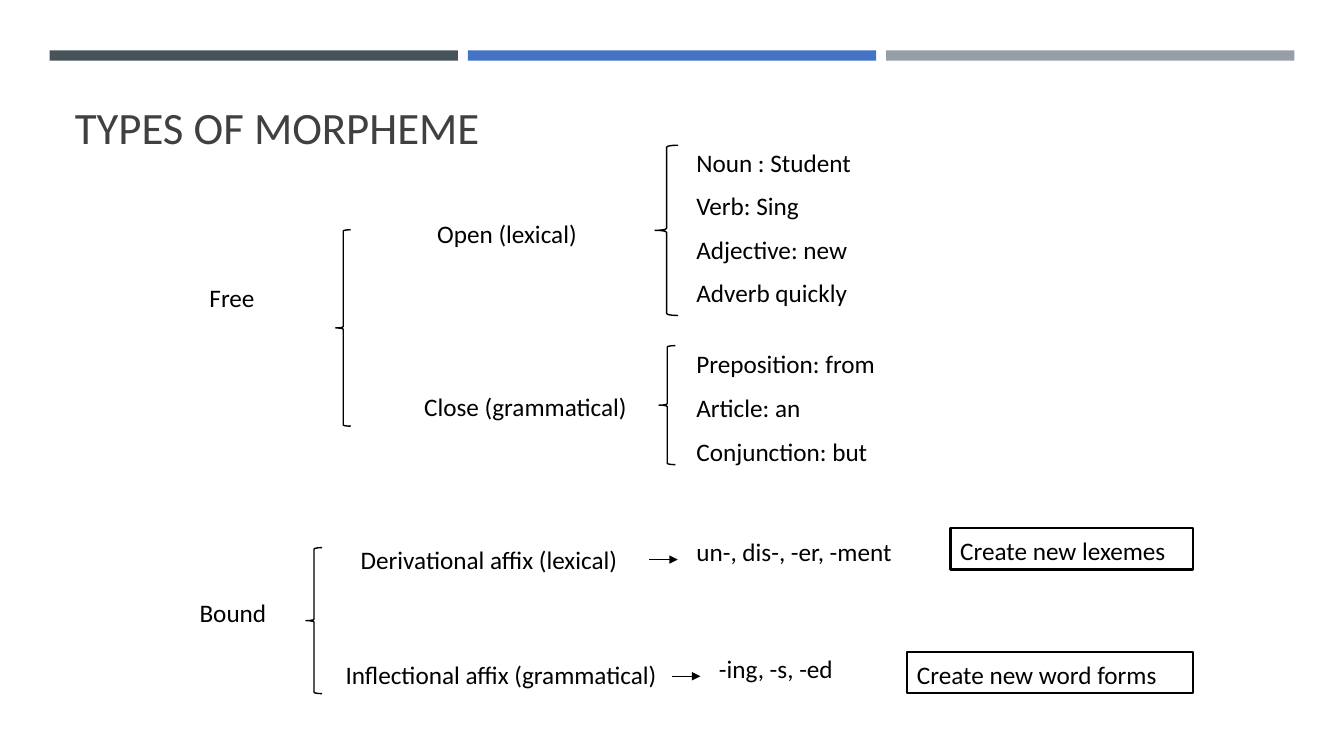
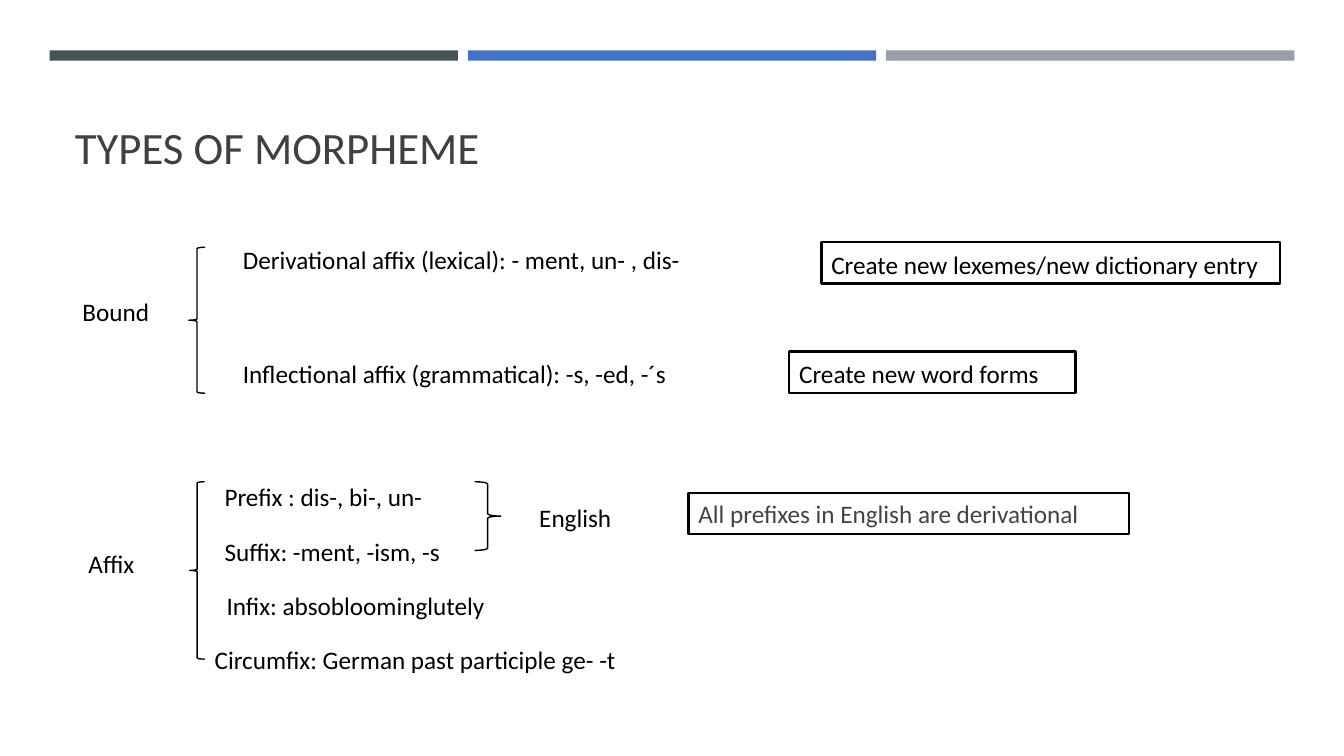
"""Build two slides on the types of morpheme."""
import pptx
import pptx.util
import pptx.dml.color
import pptx.enum.shapes
import pptx.enum.text
import pptx.oxml
import pptx.oxml.ns

Cm, Pt = pptx.util.Cm, pptx.util.Pt
RGBColor = pptx.dml.color.RGBColor
SHAPE = pptx.enum.shapes.MSO_SHAPE
NSDECL = pptx.oxml.ns.nsdecls("a")

SLATE = RGBColor(0x46, 0x53, 0x59)
BLUE = RGBColor(0x44, 0x72, 0xC4)
GREY = RGBColor(0x96, 0x9F, 0xA7)
TITLE_GREY = RGBColor(0x40, 0x40, 0x40)
NOTE_GREY = RGBColor(0x44, 0x44, 0x44)
BLACK = RGBColor(0, 0, 0)
WHITE = RGBColor(0xFF, 0xFF, 0xFF)
FONT = "Calibri"
ROW_H = 1.04
LIST_STEP = 1.11


def style(p, color=BLACK, size=18):
    """Set the font and left alignment of a paragraph."""
    p.font.name, p.font.size, p.font.color.rgb = FONT, Pt(size), color
    p.alignment = pptx.enum.text.PP_ALIGN.LEFT


def fill_text(tf, lines, color=BLACK, line_spacing=1.07):
    """Write lines as spaced paragraphs into a text frame."""
    tf.word_wrap = True
    tf.vertical_anchor = pptx.enum.text.MSO_ANCHOR.TOP
    for i, line in enumerate(lines):
        p = tf.add_paragraph() if i else tf.paragraphs[0]
        p.text = line
        p.line_spacing, p.space_after = line_spacing, Pt(8)
        style(p, color)


def label(s, x, y, w, *lines):
    """Add a plain text box sized for its lines."""
    h = ROW_H + LIST_STEP * (len(lines) - 1)
    tb = s.shapes.add_textbox(Cm(x), Cm(y), Cm(w), Cm(h))
    fill_text(tb.text_frame, lines)


def shape(s, kind, x, y, w, h, fill=None, line=None, weight=1):
    """Add a preset shape without shadow."""
    sp = s.shapes.add_shape(kind, Cm(x), Cm(y), Cm(w), Cm(h))
    sp.shadow.inherit = False
    if fill is None:
        sp.fill.background()
    else:
        sp.fill.solid()
        sp.fill.fore_color.rgb = fill
    if line is None:
        sp.line.fill.background()
    else:
        sp.line.color.rgb, sp.line.width = line, Pt(weight)
    return sp


def brace(s, x, y, w, h, kind=SHAPE.LEFT_BRACE):
    """Add a thin black brace."""
    shape(s, kind, x, y, w, h, line=BLACK)


def framed(s, x, y, w, text, color=BLACK, line_spacing=1.07):
    """Add a framed white box with one line of text."""
    sp = shape(s, SHAPE.RECTANGLE, x, y, w, ROW_H, WHITE, BLACK, 1.75)
    fill_text(sp.text_frame, [text], color, line_spacing)


def arrow(s, x, y, length=0.72):
    """Add a short arrow pointing right."""
    c = s.shapes.add_connector(pptx.enum.shapes.MSO_CONNECTOR.STRAIGHT,
                               Cm(x), Cm(y), Cm(x + length), Cm(y))
    c.line.color.rgb, c.line.width = BLACK, Pt(1)
    c.line._get_or_add_ln().append(
        pptx.oxml.parse_xml(f'<a:tailEnd {NSDECL} type="triangle"/>'))
    c._element.spPr.append(pptx.oxml.parse_xml(f"<a:effectLst {NSDECL}/>"))


def new_slide(prs, title_top):
    """Add a slide with the three top bands and the title."""
    s = prs.slides.add_slide(prs.slide_layouts[5])
    for i, color in enumerate((SLATE, BLUE, GREY)):
        shape(s, SHAPE.RECTANGLE, 1.25 + 10.54 * i, 1.27, 10.29, 0.26, color)
    title = s.shapes.title
    title.left, title.top = Cm(1.63), Cm(title_top)
    title.width, title.height = Cm(30.63), Cm(2.06)
    tf = title.text_frame
    tf.text = "TYPES OF MORPHEME"
    tf.auto_size = pptx.enum.text.MSO_AUTO_SIZE.NONE
    tf.vertical_anchor = pptx.enum.text.MSO_ANCHOR.BOTTOM
    tf.paragraphs[0].line_spacing = 0.9
    style(tf.paragraphs[0], TITLE_GREY, 32)
    return s


def free_types(s, x, y):
    """Draw the tree of free morphemes from its top left corner."""
    label(s, x, y + 3.4, 3.15, "Free")
    brace(s, x + 3.43, y + 2.26, 0.38, 4.95)
    label(s, x + 5.74, y + 1.8, 5.6, "Open (lexical)")
    label(s, x + 5.41, y + 6.15, 6, "Close (grammatical)")
    brace(s, x + 11.48, y + 0.13, 0.58, 4.29)
    label(s, x + 12.27, y, 8, "Noun : Student", "Verb: Sing",
          "Adjective: new", "Adverb quickly")
    brace(s, x + 11.58, y + 5.18, 0.41, 3)
    label(s, x + 12.27, y + 5.08, 8, "Preposition: from", "Article: an",
          "Conjunction: but")


def bound_types(s, x, y, affixes, purposes):
    """Draw the bound morphemes with their affixes and framed purposes."""
    label(s, x, y + 1.33, 2.8, "Bound")
    brace(s, x + 2.93, y + 0.26, 0.41, 3.68)
    for i, (dx, w, text) in enumerate(affixes):
        label(s, x + dx, y + 2.89 * i, w, text)
    for dx, dy, w, text in purposes:
        framed(s, x + dx, y + dy, w, text)


def bound_examples(s, x, y):
    """Draw the arrows and the affix examples they point to."""
    for dx, dy, text in ((0, 0, "un-, dis-, -er, -ment"),
                         (0.57, 2.94, "-ing, -s, -ed")):
        arrow(s, x + dx, y + dy + 0.76)
        label(s, x + dx + 0.94, y + dy, 5.7, text)


def affix_types(s, x, y):
    """Draw the kinds of affix and the note on English."""
    label(s, x, y + 1.68, 2.7, "Affix")
    brace(s, x + 2.8, y + 0.18, 0.38, 4.47)
    rows = ((3.43, 6.5, "Prefix : dis-, bi-, un-"),
            (3.43, 6.5, "Suffix: -ment, -ism, -s"),
            (3.48, 8, "Infix: absobloominglutely"),
            (3.18, 11.8, "Circumfix: German past participle ge- -t"))
    for i, (dx, w, text) in enumerate(rows):
        label(s, x + dx, y + 1.37 * i, w, text)
    brace(s, x + 9.98, y + 0.18, 0.66, 1.73, SHAPE.RIGHT_BRACE)
    label(s, x + 11.36, y + 0.51, 3.28, "English")
    framed(s, x + 15.37, y + 0.46, 11.1,
           "All prefixes in English are derivational", NOTE_GREY, 1.0)


def main():
    """Build and save the presentation."""
    prs = pptx.Presentation()
    prs.slide_width, prs.slide_height = Cm(33.87), Cm(19.05)

    s = new_slide(prs, 1.96)
    free_types(s, 5.03, 3.53)
    bound_types(s, 4.78, 13.54,
                ((4.06, 7.2, "Derivational affix (lexical)"),
                 (3.68, 8.4, "Inflectional affix (grammatical)")),
                ((19.17, -0.23, 6.12, "Create new lexemes"),
                 (18.08, 2.89, 7.21, "Create new word forms")))
    bound_examples(s, 16.36, 13.34)

    s = new_slide(prs, 2.46)
    bound_types(s, 1.83, 5.97,
                ((4.04, 13, "Derivational affix (lexical): - ment, un- , dis-"),
                 (4.04, 13, "Inflectional affix (grammatical): -s, -ed, -´s")),
                ((18.87, 0.13, 11.56, "Create new lexemes/new dictionary entry"),
                 (18.06, 2.89, 7.21, "Create new word forms")))
    affix_types(s, 1.98, 11.96)

    prs.save("out.pptx")


if __name__ == "__main__":
    main()
